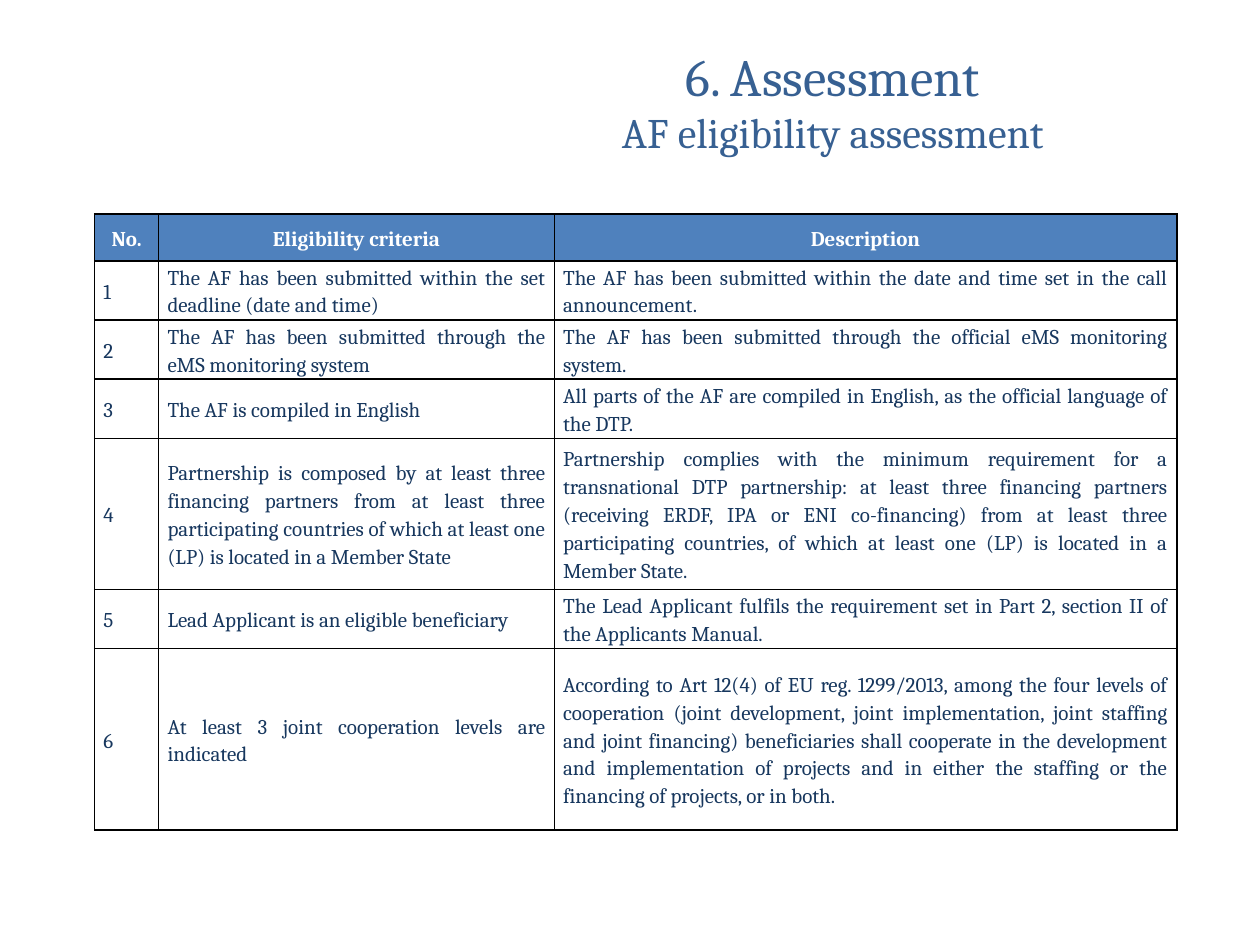
from dataclasses import dataclass

from lxml import etree
from pptx import Presentation
from pptx.dml.color import RGBColor
from pptx.enum.text import MSO_ANCHOR as Anchor, PP_ALIGN as Align
from pptx.oxml import parse_xml
from pptx.util import Inches, Pt

COLORS = {"title": "376092", "header": "4F81BD", "body": "17375E",
          "white": "FFFFFF", "border": "000000"}
FONT = "Cambria"
NS = "http://schemas.openxmlformats.org/drawingml/2006/main"
COLS = [0.51, 3.14, 4.94]
HEADER = ["No.", "Eligibility criteria", "Description"]
HEADER_HEIGHT = 0.37


@dataclass
class Criterion:
    name: str
    description: str
    height: float = 0.47


CRITERIA = [
    Criterion("The AF has been submitted within the set deadline (date and time)",
              "The AF has been submitted within the date and time set in the call "
              "announcement."),
    Criterion("The AF has been submitted through the eMS monitoring system",
              "The AF has been submitted through the official eMS monitoring system."),
    Criterion("The AF is compiled in English",
              "All parts of the AF are compiled in English, as the official language "
              "of the DTP."),
    Criterion("Partnership is composed by at least three financing partners from at "
              "least three participating countries of which at least one (LP) is "
              "located in a Member State",
              "Partnership complies with the minimum requirement for a transnational "
              "DTP partnership: at least three financing partners (receiving ERDF, IPA "
              "or ENI co-financing) from at least three participating countries, of "
              "which at least one (LP) is located in a Member State.", 1.2),
    Criterion("Lead Applicant is an eligible beneficiary",
              "The Lead Applicant fulfils the requirement set in Part 2, section II of "
              "the Applicants Manual."),
    Criterion("At least 3 joint cooperation levels are indicated",
              "According to Art 12(4) of EU reg. 1299/2013, among the four levels of "
              "cooperation (joint development, joint implementation, joint staffing "
              "and joint financing) beneficiaries shall cooperate in the development "
              "and implementation of projects and in either the staffing or the "
              "financing of projects, or in both.", 1.44),
]


def write(p, text: str, *, size: float, color: str, bold: bool = False,
          align=Align.CENTER, spacing: float = 1.0, after: float = 0) -> None:
    p.alignment = align
    p.line_spacing = spacing
    p.space_before = Pt(0)
    p.space_after = Pt(after)
    r = p.add_run()
    r.text = text
    r.font.name = FONT
    r.font.size = Pt(size)
    r.font.bold = bold
    r.font.color.rgb = RGBColor.from_string(COLORS[color])


def add_borders(cell) -> None:
    tc_pr = cell._tc.get_or_add_tcPr()
    for i, side in enumerate(("lnL", "lnR", "lnT", "lnB")):
        ln = parse_xml(f'<a:{side} xmlns:a="{NS}" w="{Pt(1)}"/>')
        fill = etree.SubElement(ln, f"{{{NS}}}solidFill")
        etree.SubElement(fill, f"{{{NS}}}srgbClr", val=COLORS["border"])
        tc_pr.insert(i, ln)


def fill_cell(cell, text: str, header: bool) -> None:
    cell.vertical_anchor = Anchor.MIDDLE
    cell.margin_left = cell.margin_right = Inches(0.07)
    cell.margin_top = cell.margin_bottom = 0
    cell.fill.solid()
    cell.fill.fore_color.rgb = RGBColor.from_string(
        COLORS["header" if header else "white"])
    write(cell.text_frame.paragraphs[0], text, size=12, spacing=1.15, bold=header,
          color="white" if header else "body", after=3 if header else 0,
          align=Align.CENTER if header else Align.JUSTIFY)
    add_borders(cell)


def add_title(s) -> None:
    tf = s.shapes.add_textbox(Inches(3.58), Inches(0.3),
                              Inches(6.06), Inches(0.94)).text_frame
    tf.word_wrap = True
    write(tf.paragraphs[0], "6. Assessment", size=30, color="title")
    write(tf.add_paragraph(), "AF eligibility assessment", size=24, color="title")


def add_criteria_table(s) -> None:
    rows = [HEADER] + [[str(n), c.name, c.description]
                       for n, c in enumerate(CRITERIA, 1)]
    heights = [HEADER_HEIGHT] + [c.height for c in CRITERIA]
    table = s.shapes.add_table(len(rows), len(COLS), Inches(0.75), Inches(1.7),
                               Inches(sum(COLS)), Inches(sum(heights))).table
    for col, width in zip(table.columns, COLS):
        col.width = Inches(width)
    for i, (texts, height) in enumerate(zip(rows, heights)):
        table.rows[i].height = Inches(height)
        for j, text in enumerate(texts):
            fill_cell(table.cell(i, j), text, header=i == 0)


def main() -> None:
    prs = Presentation()
    prs.slide_width, prs.slide_height = Inches(10), Inches(7.5)
    s = prs.slides.add_slide(prs.slide_layouts[6])
    add_title(s)
    add_criteria_table(s)
    prs.save("out.pptx")


if __name__ == "__main__":
    main()
